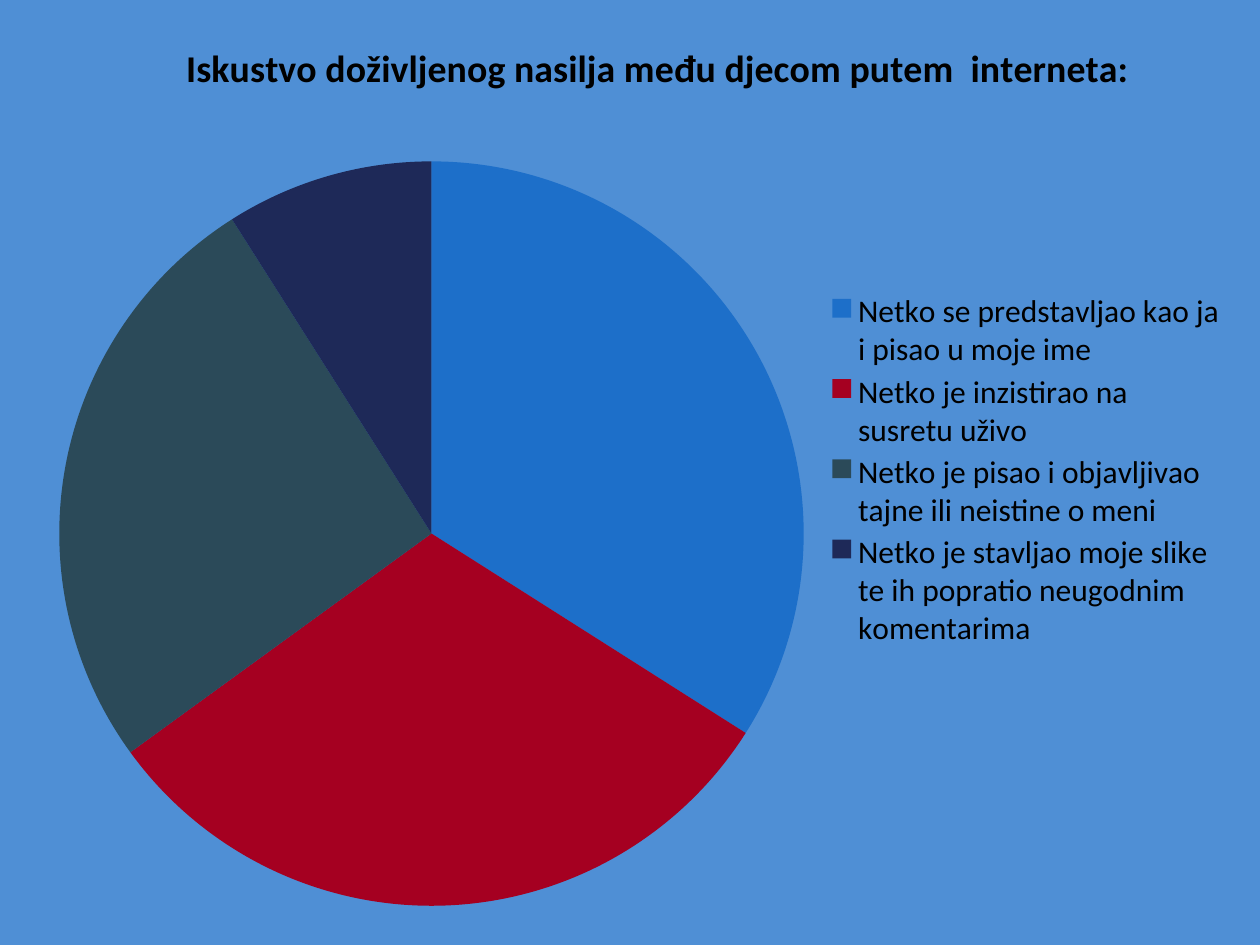
from dataclasses import dataclass
from typing import NamedTuple

from lxml import etree
from pptx import Presentation
from pptx import util as u
from pptx.chart.data import CategoryChartData
from pptx.dml.color import RGBColor
from pptx.enum import chart as ch
from pptx.oxml.ns import qn


@dataclass(frozen=True)
class Theme:
    font: str = "Calibri"
    background: str = "4F8FD5"
    ink: str = "000000"
    title_size: float = 21.6
    legend_size: float = 18


class Answer(NamedTuple):
    label: str
    share: int
    color: str


class Box(NamedTuple):
    """Shares of the surrounding slide or chart; no size means automatic."""
    x: float
    y: float
    w: float | None = None
    h: float | None = None


THEME = Theme()
TITLE = "Iskustvo doživljenog nasilja među djecom putem  interneta:"
ANSWERS = [
    Answer("Netko se predstavljao kao ja i pisao u moje ime", 34, "1D6FC9"),
    Answer("Netko je inzistirao na susretu uživo", 31, "A50021"),
    Answer("Netko je pisao i objavljivao tajne ili neistine o meni", 26, "2B4A59"),
    Answer("Netko je stavljao moje slike te ih popratio neugodnim komentarima",
           9, "1E2958"),
]
CHART = Box(0.028, 0.017, 0.953, 0.961)
HEADING = Box(0.12, 0.02)
PIE = Box(0.02, 0.16, 0.62, 0.82)
LEGEND = Box(0.66, 0.3, 0.33, 0.4)


def paint(fill, color: str) -> None:
    fill.solid()
    fill.fore_color.rgb = RGBColor.from_string(color)


def style_font(font, size: float, bold: bool = False) -> None:
    font.name = THEME.font
    font.size = u.Pt(size)
    font.bold = bold
    font.color.rgb = RGBColor.from_string(THEME.ink)


def place(parent, index: int, box: Box, inner: bool = False) -> None:
    """Give a chart part a manual layout, inserted at its schema position."""
    for old in parent.findall(qn("c:layout")):
        parent.remove(old)
    layout = etree.Element(qn("c:layout"))
    manual = etree.SubElement(layout, qn("c:manualLayout"))
    settings = [("layoutTarget", "inner")] if inner else []
    settings += [("xMode", "edge"), ("yMode", "edge")]
    settings += [(k, str(v)) for k, v in box._asdict().items() if v is not None]
    for tag, value in settings:
        etree.SubElement(manual, qn(f"c:{tag}")).set("val", value)
    parent.insert(index, layout)


def add_pie(prs, s, answers: list[Answer]):
    data = CategoryChartData()
    data.categories = [a.label for a in answers]
    data.add_series("Series 1", [a.share for a in answers])
    width, height = prs.slide_width, prs.slide_height
    chart = s.shapes.add_chart(
        ch.XL_CHART_TYPE.PIE,
        int(CHART.x * width), int(CHART.y * height),
        int(CHART.w * width), int(CHART.h * height), data).chart
    style_font(chart.font, THEME.legend_size)

    plot = chart.plots[0]
    plot.vary_by_categories = True
    for i, answer in enumerate(answers):
        fmt = plot.series[0].points[i].format
        paint(fmt.fill, answer.color)
        fmt.line.fill.background()
    place(plot._element.getparent(), 0, PIE, inner=True)
    return chart


def add_title(chart, title: str) -> None:
    chart.has_title = True
    p = chart.chart_title.text_frame.paragraphs[0]
    p.text = title
    style_font(p.runs[0].font, THEME.title_size, bold=True)
    place(chart.chart_title._element, 1, HEADING)


def add_legend(chart) -> None:
    chart.has_legend = True
    chart.legend.position = ch.XL_LEGEND_POSITION.RIGHT
    chart.legend.include_in_layout = False
    style_font(chart.legend.font, THEME.legend_size)
    place(chart.legend._element, 1, LEGEND)


def main() -> None:
    prs = Presentation()
    prs.slide_width, prs.slide_height = u.Inches(10), u.Inches(7.5)
    s = prs.slides.add_slide(prs.slide_layouts.get_by_name("Blank"))
    paint(s.background.fill, THEME.background)
    chart = add_pie(prs, s, ANSWERS)
    add_title(chart, TITLE)
    add_legend(chart)
    prs.save("out.pptx")


if __name__ == "__main__":
    main()
